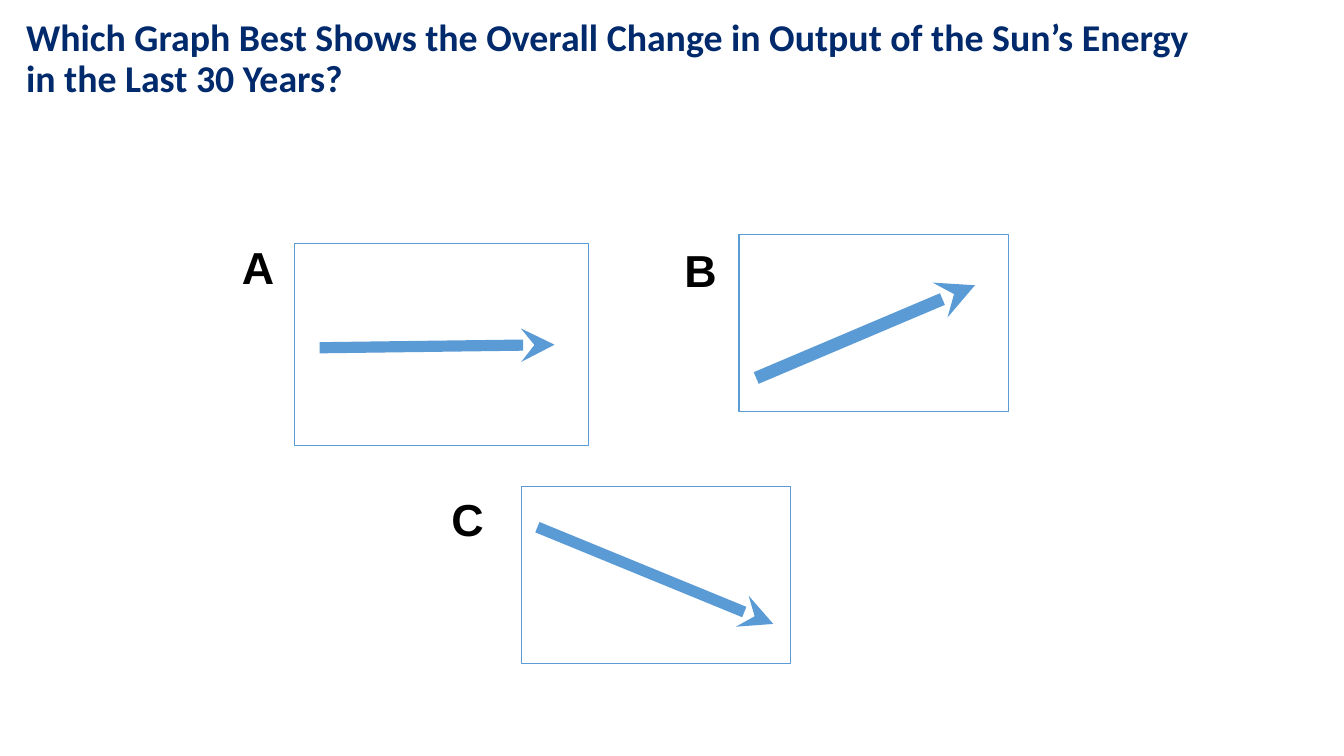
import pptx
import pptx.dml.color
import pptx.enum.shapes
import pptx.enum.text
import pptx.oxml
import pptx.oxml.ns
import pptx.util

NAVY = pptx.dml.color.RGBColor(0x00, 0x2A, 0x6C)
BLUE = pptx.dml.color.RGBColor(0x5B, 0x9B, 0xD5)
BLACK = pptx.dml.color.RGBColor(0x00, 0x00, 0x00)
EMU_PER_PX = 9144


def px(length):
    """Turn px, a hundred to the inch, into EMU."""
    return pptx.util.Emu(length * EMU_PER_PX)


class GraphPage:
    """Draws the elements of the graph question on one slide."""

    def __init__(self, page):
        """Keep the slide and its shared style."""
        self.page = page
        self.accent = BLUE
        self.frame_width = pptx.util.Pt(0.75)

    def text(self, place, lines, font, size, color, anchor, spacing=1.0):
        """Add a bold text box with its lines in one paragraph."""
        box = self.page.shapes.add_textbox(*map(px, place))
        frame = box.text_frame
        frame.word_wrap = True
        frame.vertical_anchor = anchor
        para = frame.paragraphs[0]
        para.line_spacing = spacing
        for index, line in enumerate(lines):
            if index:
                para.add_line_break()
            span = para.add_run()
            span.text = line
            span.font.name = font
            span.font.size = pptx.util.Pt(size)
            span.font.bold = True
            span.font.color.rgb = color

    def title(self, place, lines):
        """Add the question at the top."""
        middle = pptx.enum.text.MSO_ANCHOR.MIDDLE
        self.text(place, lines, "Calibri", 27, NAVY, middle, 0.9)

    def label(self, left, top, letter):
        """Add the letter beside a graph."""
        anchor = pptx.enum.text.MSO_ANCHOR.TOP
        self.text((left, top, 53, 64), [letter], "Arial", 32, BLACK, anchor)

    def frame(self, place):
        """Add the outline of a graph."""
        rectangle = pptx.enum.shapes.MSO_SHAPE.RECTANGLE
        box = self.page.shapes.add_shape(rectangle, *map(px, place))
        box.shadow.inherit = False
        box.fill.background()
        box.line.color.rgb = self.accent
        box.line.width = self.frame_width

    def trend(self, start, end, width):
        """Add a thick arrow with a stealth head."""
        straight = pptx.enum.shapes.MSO_CONNECTOR.STRAIGHT
        arrow = self.page.shapes.add_connector(straight, *map(px, start + end))
        arrow.line.color.rgb = self.accent
        arrow.line.width = pptx.util.Pt(width)
        properties = arrow.element.spPr
        outline = properties.find(pptx.oxml.ns.qn("a:ln"))
        namespace = pptx.oxml.ns.nsdecls("a")
        outline.append(pptx.oxml.parse_xml(f'<a:tailEnd {namespace} type="stealth"/>'))
        properties.append(pptx.oxml.parse_xml(f"<a:effectLst {namespace}/>"))


GRAPHS = [
    ("A", (230, 233), (292, 242, 292, 200), (317, 345), (550, 342), 8),
    ("B", (669, 236), (733, 233, 267, 175), (750, 375), (967, 283), 9),
    ("C", (438, 483), (517, 483, 267, 175), (533, 523), (767, 619), 8),
]


def main():
    """Build and save the slide."""
    deck = pptx.Presentation()
    deck.slide_width = px(1333)
    deck.slide_height = px(750)
    graph_page = GraphPage(deck.slides.add_slide(deck.slide_layouts[6]))
    graph_page.title((16, 0, 1299, 118), [
        "Which Graph Best Shows the Overall Change in Output of the Sun’s Energy",
        "in the Last 30 Years?",
    ])
    for letter, corner, place, start, end, width in GRAPHS:
        graph_page.frame(place)
        graph_page.trend(start, end, width)
        graph_page.label(*corner, letter)
    deck.save("out.pptx")


if __name__ == "__main__":
    main()
